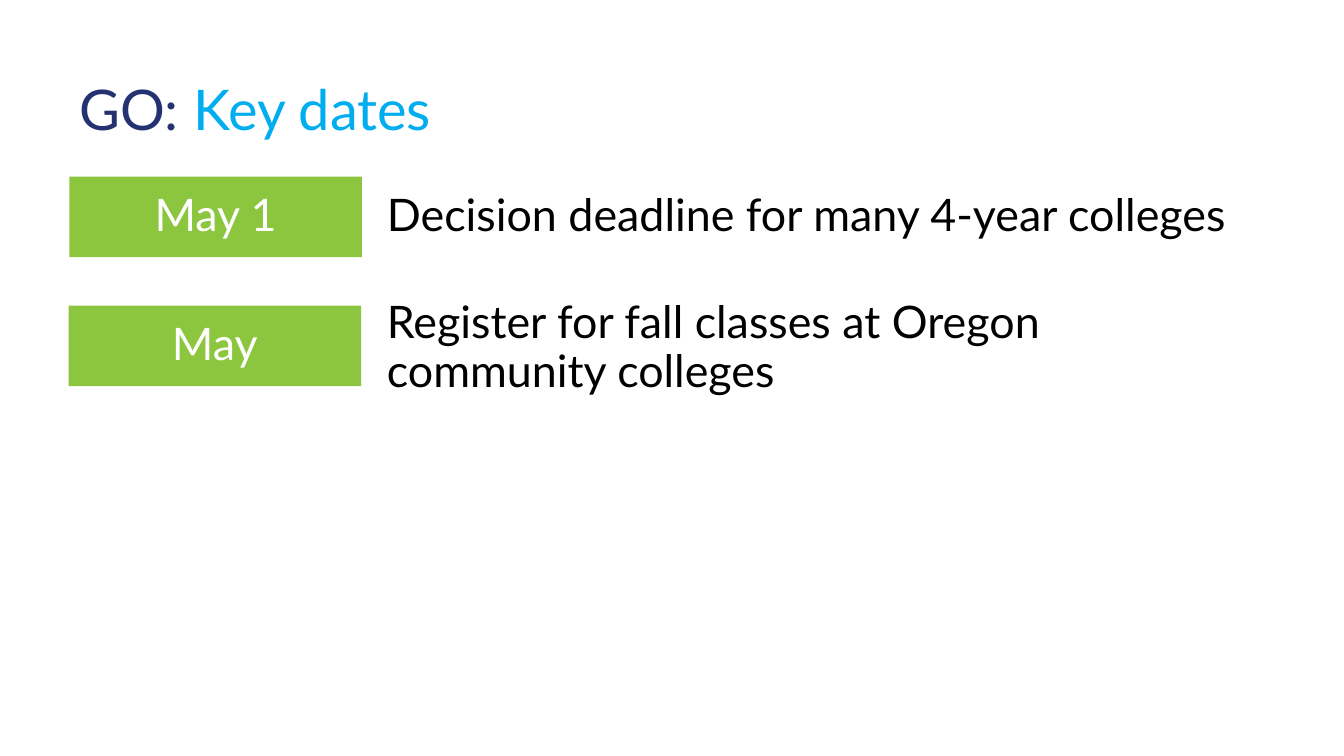
from dataclasses import dataclass

from pptx import Presentation
from pptx import util as u
from pptx.dml.color import RGBColor
from pptx.enum import shapes, text


@dataclass(frozen=True)
class Theme:
    font: str = "Lato"
    navy: str = "253271"
    sky: str = "00AEEF"
    green: str = "8CC63F"
    black: str = "000000"
    white: str = "FFFFFF"
    title_size: int = 40
    body_size: int = 32


theme = Theme()


def add_span(para, wording, size, color):
    span = para.add_run()
    span.text = wording
    span.font.name = theme.font
    span.font.size = u.Pt(size)
    span.font.color.rgb = RGBColor.from_string(color)


def prepare(box, anchor, alignment):
    frame = box.text_frame
    frame.word_wrap = True
    frame.auto_size = text.MSO_AUTO_SIZE.NONE
    frame.vertical_anchor = anchor
    frame.margin_left = frame.margin_right = u.Cm(0.25)
    frame.margin_top = frame.margin_bottom = u.Cm(0.13)
    para = frame.paragraphs[0]
    para.alignment = alignment
    para.line_spacing = 0.9
    para.space_before = u.Pt(0)
    return para


deck = Presentation()
deck.slide_width = u.Cm(33.87)
deck.slide_height = u.Cm(19.05)
page = deck.slides.add_slide(deck.slide_layouts[5])

row_height = u.Cm(2.03)

title = page.shapes.title
title.left, title.top = u.Cm(1.75), u.Cm(1.93)
title.width, title.height = u.Cm(30.4), row_height
para = prepare(title, text.MSO_ANCHOR.TOP, text.PP_ALIGN.LEFT)
add_span(para, "GO: ", theme.title_size, theme.navy)
add_span(para, "Key dates", theme.title_size, theme.sky)

key_dates = [
    ("May 1", 1.75, 4.45, 4.45, ["Decision deadline for many 4-year colleges"]),
    ("May", 1.73, 7.7, 7.77, ["Register for fall classes at Oregon", "community colleges"]),
]

for date, date_left, date_top, event_top, event_lines in key_dates:
    event_box = page.shapes.add_textbox(u.Cm(9.5), u.Cm(event_top), u.Cm(22.86), row_height)
    para = prepare(event_box, text.MSO_ANCHOR.MIDDLE, text.PP_ALIGN.LEFT)
    for index, line in enumerate(event_lines):
        if index:
            para.add_line_break()
        add_span(para, line, theme.body_size, theme.black)

    date_box = page.shapes.add_shape(
        shapes.MSO_SHAPE.RECTANGLE, u.Cm(date_left), u.Cm(date_top), u.Cm(7.37), row_height
    )
    date_box.shadow.inherit = False
    date_box.fill.solid()
    date_box.fill.fore_color.rgb = RGBColor.from_string(theme.green)
    date_box.line.fill.background()
    para = prepare(date_box, text.MSO_ANCHOR.MIDDLE, text.PP_ALIGN.CENTER)
    add_span(para, date, theme.body_size, theme.white)

deck.save("out.pptx")
